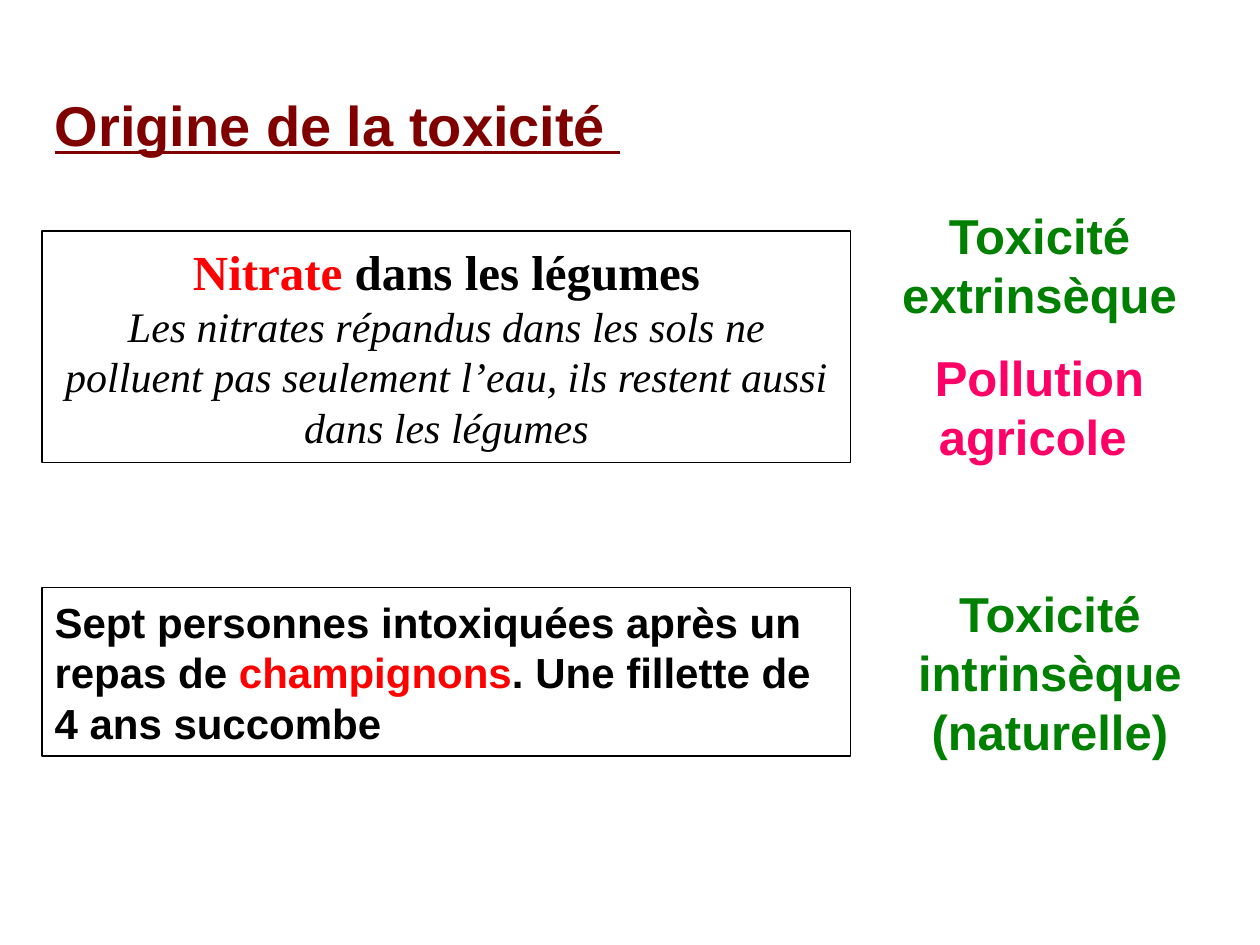
import pptx
import pptx.dml.color
import pptx.enum.shapes
import pptx.enum.text
import pptx.util
from pptx.util import Cm

SANS = "Arial"
SERIF = "Times New Roman"
BLACK, RED, GREEN, PINK, MAROON = "000000", "FF0000", "008000", "FF0066", "800000"
LEFT = pptx.enum.text.PP_ALIGN.LEFT
CENTER = pptx.enum.text.PP_ALIGN.CENTER


def color(hex_value):
    return pptx.dml.color.RGBColor.from_string(hex_value)


def add_run(paragraph, text, size, font_name, hex_value, bold=True, italic=False, underline=False):
    run = paragraph.add_run()
    run.text = text
    font = run.font
    font.size = pptx.util.Pt(size)
    font.name = font_name
    font.color.rgb = color(hex_value)
    font.bold = bold
    font.italic = italic
    font.underline = underline


def fill_text(shape, paragraphs, alignment, anchor, gap=0):
    """Write paragraphs, each a list of add_run arguments, with a gap in points between them."""
    frame = shape.text_frame
    frame.word_wrap = True
    frame.auto_size = pptx.enum.text.MSO_AUTO_SIZE.NONE
    frame.vertical_anchor = anchor
    for index, runs in enumerate(paragraphs):
        paragraph = frame.add_paragraph() if index else frame.paragraphs[0]
        paragraph.alignment = alignment
        paragraph.space_before = pptx.util.Pt(gap if index else 0)
        for run in runs:
            add_run(paragraph, *run)


def format_title(slide):
    title = slide.shapes.title
    title.left, title.top, title.width, title.height = Cm(0.85), Cm(1.7), Cm(19.7), Cm(1.6)
    runs = [("Origine de la toxicité", 32, SANS, MAROON, True, False, True),
            (" ", 32, SERIF, MAROON, False, False, True)]
    fill_text(title, [runs], LEFT, pptx.enum.text.MSO_ANCHOR.TOP)


def add_example(slide, top, height, paragraphs, alignment):
    box = slide.shapes.add_shape(pptx.enum.shapes.MSO_SHAPE.RECTANGLE,
                                 Cm(0.85), top, Cm(16.3), height)
    box.shadow.inherit = False
    box.fill.solid()
    box.fill.fore_color.rgb = color("FFFFFF")
    box.line.color.rgb = color(BLACK)
    box.line.width = pptx.util.Pt(0.75)
    fill_text(box, paragraphs, alignment, pptx.enum.text.MSO_ANCHOR.MIDDLE)


def add_category(slide, left, top, width, height, labels):
    box = slide.shapes.add_textbox(left, top, width, height)
    paragraphs = [[(text, 28, SANS, hex_value)] for text, hex_value in labels]
    fill_text(box, paragraphs, CENTER, pptx.enum.text.MSO_ANCHOR.TOP, gap=14)


def main():
    presentation = pptx.Presentation()
    presentation.slide_width = Cm(25.4)
    presentation.slide_height = Cm(19.05)
    slide = presentation.slides.add_slide(presentation.slide_layouts[5])

    format_title(slide)
    add_example(slide, Cm(4.66), Cm(4.66), [
        [("Nitrate", 28, SERIF, RED), (" dans les légumes", 28, SERIF, BLACK)],
        [("Les nitrates répandus dans les sols ne polluent pas seulement l’eau, "
          "ils restent aussi dans les légumes", 24, SERIF, BLACK, False, True)],
    ], CENTER)
    add_category(slide, Cm(17.57), Cm(4.02), Cm(6.77), Cm(5.59),
                 [("Toxicité extrinsèque", GREEN), ("Pollution agricole ", PINK)])
    add_example(slide, Cm(11.85), Cm(3.39), [
        [("Sept personnes intoxiquées après un repas de ", 24, SANS, BLACK),
         ("champignons", 24, SANS, RED),
         (". Une fillette de 4 ans succombe", 24, SANS, BLACK)],
    ], LEFT)
    add_category(slide, Cm(17.99), Cm(11.64), Cm(6.35), Cm(3.81),
                 [("Toxicité intrinsèque (naturelle)", GREEN)])

    presentation.save("out.pptx")


if __name__ == "__main__":
    main()
